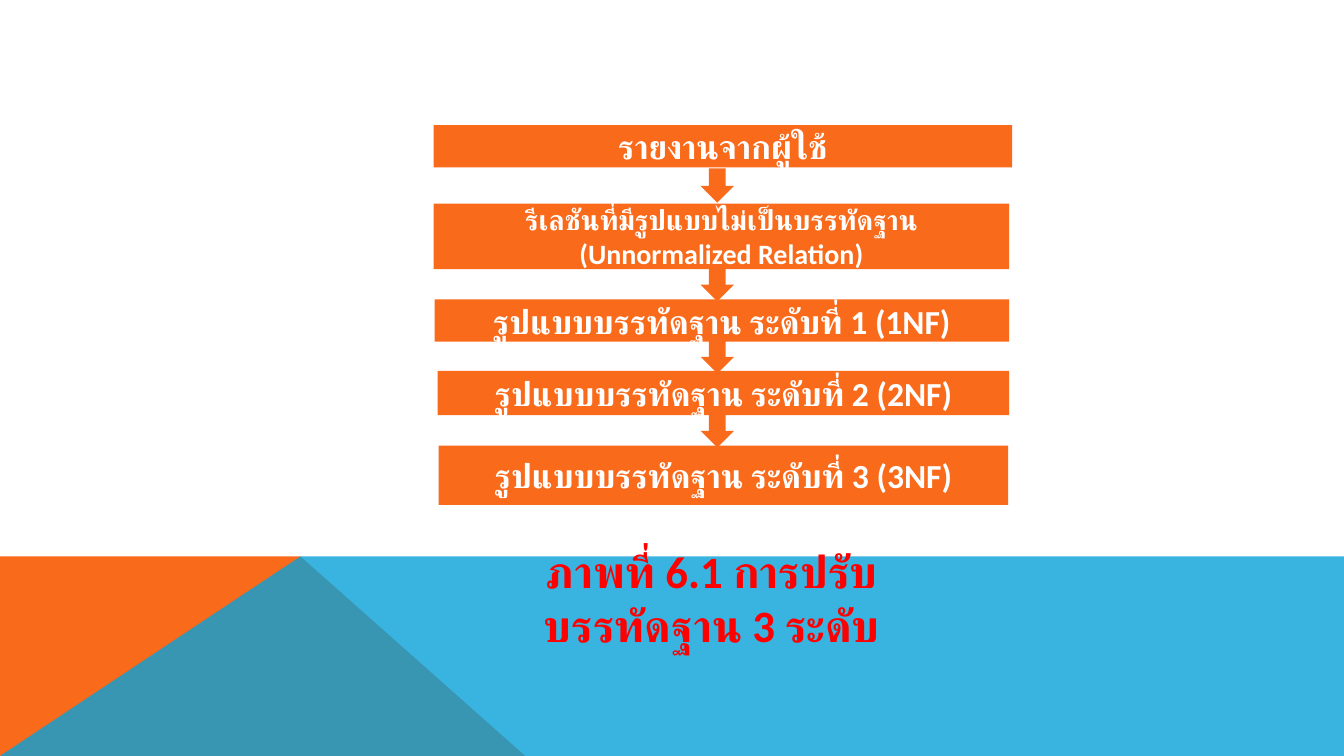
import lxml.etree
import pptx
import pptx.dml.color
import pptx.enum.lang
import pptx.enum.shapes
import pptx.enum.text
import pptx.oxml.ns
import pptx.util
from pptx.util import Inches

ORANGE, BLUE, WHITE, RED = "F96A1B", "08A1D9", "FFFFFF", "FF0000"
FONT = "Calibri"
SHAPES = pptx.enum.shapes.MSO_SHAPE

STEPS = [
    ((4.3, 1.24, 5.74, 0.42), 24, ["รายงานจากผู้ใช้"]),
    ((4.3, 2.02, 5.71, 0.65), 20,
     ["รีเลชันที่มีรูปแบบไม่เป็นบรรทัดฐาน", "(Unnormalized Relation)"]),
    ((4.31, 2.97, 5.7, 0.42), 24, ["รูปแบบบรรทัดฐาน ระดับที่ 1 (1NF)"]),
    ((4.34, 3.68, 5.67, 0.44), 24, ["รูปแบบบรรทัดฐาน ระดับที่ 2 (2NF)"]),
    ((4.35, 4.42, 5.65, 0.59), 24, ["รูปแบบบรรทัดฐาน ระดับที่ 3 (3NF)"]),
]


def rgb(value):
    """Return the colour for a hex string."""
    return pptx.dml.color.RGBColor.from_string(value)


def paint(shape, color, opacity=100):
    """Give a shape a flat fill without outline or shadow."""
    shape.shadow.inherit = False
    shape.line.fill.background()
    shape.fill.solid()
    shape.fill.fore_color.rgb = rgb(color)
    if opacity < 100:
        fill_tag, color_tag, alpha_tag = map(
            pptx.oxml.ns.qn, ("a:solidFill", "a:srgbClr", "a:alpha"))
        tint = shape.element.spPr.find(f"{fill_tag}/{color_tag}")
        lxml.etree.SubElement(tint, alpha_tag, val=str(opacity * 1000))


def write(shape, lines, size, color):
    """Write centred bold lines into a shape."""
    frame = shape.text_frame
    frame.word_wrap = True
    frame.vertical_anchor = pptx.enum.text.MSO_ANCHOR.MIDDLE
    style = {"name": FONT, "size": pptx.util.Pt(size), "bold": True,
             "language_id": pptx.enum.lang.MSO_LANGUAGE_ID.THAI}
    for number, line in enumerate(lines):
        paragraph = frame.add_paragraph() if number else frame.paragraphs[0]
        paragraph.alignment = pptx.enum.text.PP_ALIGN.CENTER
        run = paragraph.add_run()
        run.text = line
        for key, value in style.items():
            setattr(run.font, key, value)
        run.font.color.rgb = rgb(color)
        lxml.etree.SubElement(
            run.font._element, pptx.oxml.ns.qn("a:cs"), typeface=FONT)


def add_footer_band(slide, box):
    """Draw the orange wedge and the translucent blue band over it."""
    left, top, width, height = box
    right, bottom = left + width, top + height
    peak = left + 2.98
    wedge = [(left, bottom), (left, top), (peak, top), (left + 5.21, bottom)]
    band = [(left, bottom), (peak, top), (right, top), (right, bottom)]
    for corners, color, opacity in ((wedge, ORANGE, 100), (band, BLUE, 80)):
        points = [(Inches(x), Inches(y)) for x, y in corners]
        outline = slide.shapes.build_freeform(*points[0])
        outline.add_line_segments(points[1:], close=True)
        paint(outline.convert_to_shape(), color, opacity)


def add_caption(slide, box):
    """Write the figure caption."""
    caption = slide.shapes.add_textbox(*map(Inches, box))
    write(caption, ["ภาพที่ 6.1 การปรับบรรทัดฐาน 3 ระดับ"], 32, RED)


def add_step(slide, box, size, lines):
    """Draw one labelled step of the flow."""
    step = slide.shapes.add_shape(SHAPES.RECTANGLE, *map(Inches, box))
    paint(step, ORANGE)
    write(step, lines, size, WHITE)


def add_flow(slide, steps):
    """Draw the steps with a down arrow centred in each gap."""
    width, height = 0.33, 0.34
    for box, size, lines in steps:
        add_step(slide, box, size, lines)
    for (upper, *_), (lower, *_) in zip(steps, steps[1:]):
        middle = (upper[1] + upper[3] + lower[1]) / 2
        arrow = slide.shapes.add_shape(
            SHAPES.DOWN_ARROW, Inches(6.95), Inches(middle - height / 2),
            Inches(width), Inches(height))
        paint(arrow, ORANGE)


def main():
    """Build and save the slide."""
    deck = pptx.Presentation()
    deck.slide_width, deck.slide_height = Inches(13.33), Inches(7.5)
    slide = deck.slides.add_slide(deck.slide_layouts[6])
    add_footer_band(slide, (0, 5.52, 13.33, 1.98))
    add_caption(slide, (4.46, 5.53, 5.2, 0.8))
    add_flow(slide, STEPS)
    deck.save("out.pptx")


if __name__ == "__main__":
    main()
